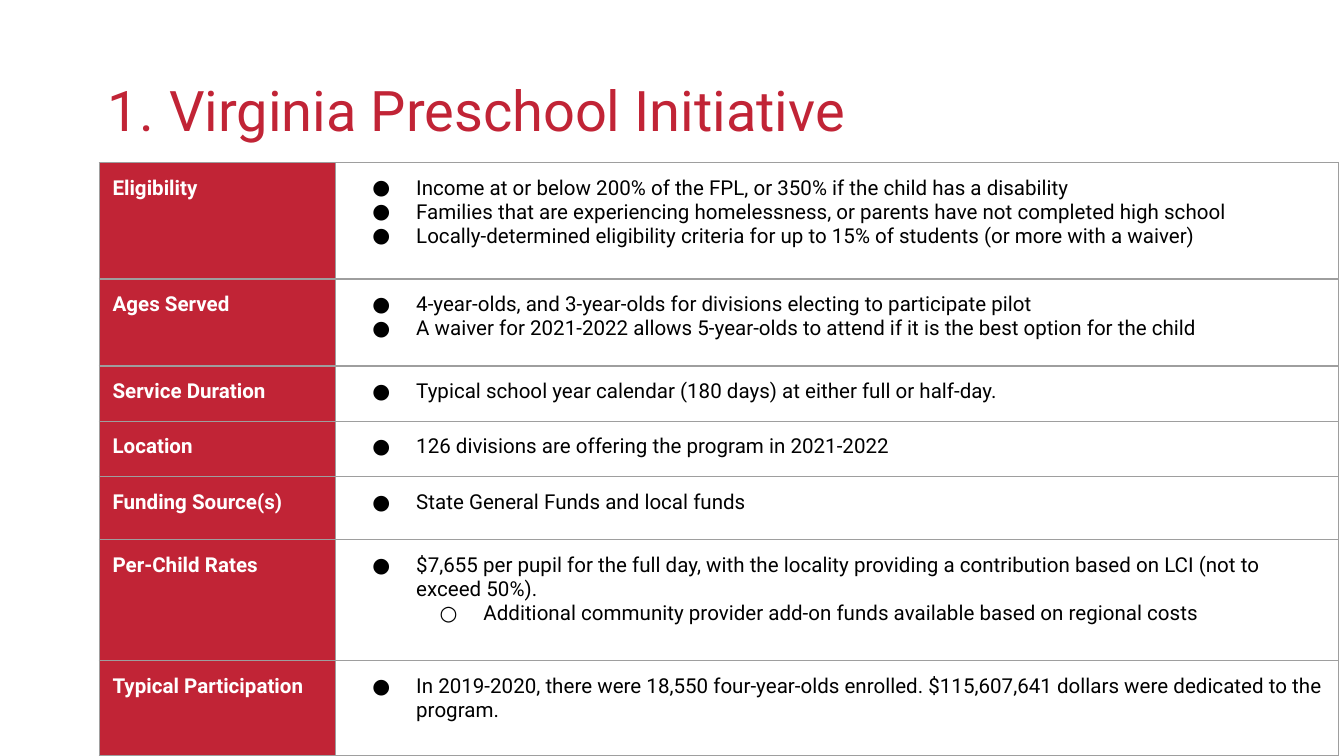
import pptx
import pptx.dml.color
import pptx.enum.text
import pptx.util
from lxml import etree
from pptx.oxml.ns import qn

Pt = pptx.util.Pt
RGBColor = pptx.dml.color.RGBColor

RED = RGBColor(0xC1, 0x24, 0x36)
WHITE = RGBColor(0xFF, 0xFF, 0xFF)
BLACK = RGBColor(0, 0, 0)
GRAY = RGBColor(0x9E, 0x9E, 0x9E)
FONT = "Roboto"

COLS = (126.7, 537.1)
ROWS = [
    (62.4, "Eligibility", [
        (0, "Income at or below 200% of the FPL, or 350% if the child has a disability"),
        (0, "Families that are experiencing homelessness, or parents have not completed high school"),
        (0, "Locally-determined eligibility criteria for up to 15% of students (or more with a waiver)"),
    ]),
    (46.6, "Ages Served", [
        (0, "4-year-olds, and 3-year-olds for divisions electing to participate pilot"),
        (0, "A waiver for 2021-2022 allows 5-year-olds to attend if it is the best option for the child"),
    ]),
    (29.7, "Service Duration", [
        (0, "Typical school year calendar (180 days) at either full or half-day."),
    ]),
    (29.7, "Location", [
        (0, "126 divisions are offering the program in 2021-2022"),
    ]),
    (33.8, "Funding Source(s)", [
        (0, "State General Funds and local funds"),
    ]),
    (64.8, "Per-Child Rates", [
        (0, "$7,655 per pupil for the full day, with the locality providing a contribution "
            "based on LCI (not to exceed 50%)."),
        (1, "Additional community provider add-on funds available based on regional costs"),
    ]),
    (50.7, "Typical Participation", [
        (0, "In 2019-2020, there were 18,550 four-year-olds enrolled. $115,607,641 dollars "
            "were dedicated to the program."),
    ]),
]


def set_font(para, size, color, bold=False):
    font = para.font
    font.name = FONT
    font.size = Pt(size)
    font.bold = bold
    font.color.rgb = color


def add_mark(para, left, hang, color, tag, **attrs):
    props = para._p.get_or_add_pPr()
    props.set("marL", str(Pt(left)))
    props.set("indent", str(-Pt(hang)))
    tint = etree.SubElement(props, qn("a:buClr"))
    etree.SubElement(tint, qn("a:srgbClr"), val=str(color))
    etree.SubElement(props, qn("a:buFont"), typeface=FONT)
    etree.SubElement(props, qn(tag), **attrs)


def add_title(slide, text):
    title = slide.shapes.title
    title.left, title.top = Pt(49.7), Pt(21.6)
    title.width, title.height = Pt(620.6), Pt(78.5)
    frame = title.text_frame
    frame.margin_left = frame.margin_right = Pt(5)
    frame.margin_top = frame.margin_bottom = Pt(2.5)
    frame.vertical_anchor = pptx.enum.text.MSO_ANCHOR.MIDDLE
    frame.auto_size = pptx.enum.text.MSO_AUTO_SIZE.NONE
    frame.text = text
    para = frame.paragraphs[0]
    add_mark(para, 36, 33, RED, "a:buAutoNum", type="arabicPeriod")
    para.alignment = pptx.enum.text.PP_ALIGN.LEFT
    para.line_spacing = 0.9
    set_font(para, 30, RED)


def style_cell(cell, color):
    cell.margin_left = cell.margin_right = Pt(7.2)
    cell.margin_top = cell.margin_bottom = Pt(7.2)
    props = cell._tc.get_or_add_tcPr()
    for side in ("a:lnL", "a:lnR", "a:lnT", "a:lnB"):
        line = etree.SubElement(props, qn(side), w=str(Pt(0.75)))
        fill = etree.SubElement(line, qn("a:solidFill"))
        etree.SubElement(fill, qn("a:srgbClr"), val=str(GRAY))
    cell.fill.solid()
    cell.fill.fore_color.rgb = color


def fill_label(cell, text):
    style_cell(cell, RED)
    cell.text = text
    set_font(cell.text_frame.paragraphs[0], 11, WHITE, True)


def fill_list(cell, items):
    style_cell(cell, WHITE)
    cell.text = "\n".join(text for level, text in items)
    for para, (level, text) in zip(cell.text_frame.paragraphs, items):
        para.level = level
        add_mark(para, 36 * (level + 1), 23.5, BLACK, "a:buChar", char="●○"[level])
        set_font(para, 11, BLACK)


def add_grid(slide):
    high = sum(row[0] for row in ROWS)
    frame = slide.shapes.add_table(
        len(ROWS), len(COLS), Pt(53.1), Pt(87.1), Pt(sum(COLS)), Pt(high))
    table = frame.table
    table.first_row = table.horz_banding = False
    for col, width in zip(table.columns, COLS):
        col.width = Pt(width)
    for row, (height, label, items) in zip(table.rows, ROWS):
        row.height = Pt(height)
        fill_label(row.cells[0], label)
        fill_list(row.cells[1], items)


def main():
    deck = pptx.Presentation()
    deck.slide_width, deck.slide_height = Pt(720), Pt(405)
    slide = deck.slides.add_slide(deck.slide_layouts[5])
    add_title(slide, "Virginia Preschool Initiative")
    add_grid(slide)
    deck.save("out.pptx")


if __name__ == "__main__":
    main()
